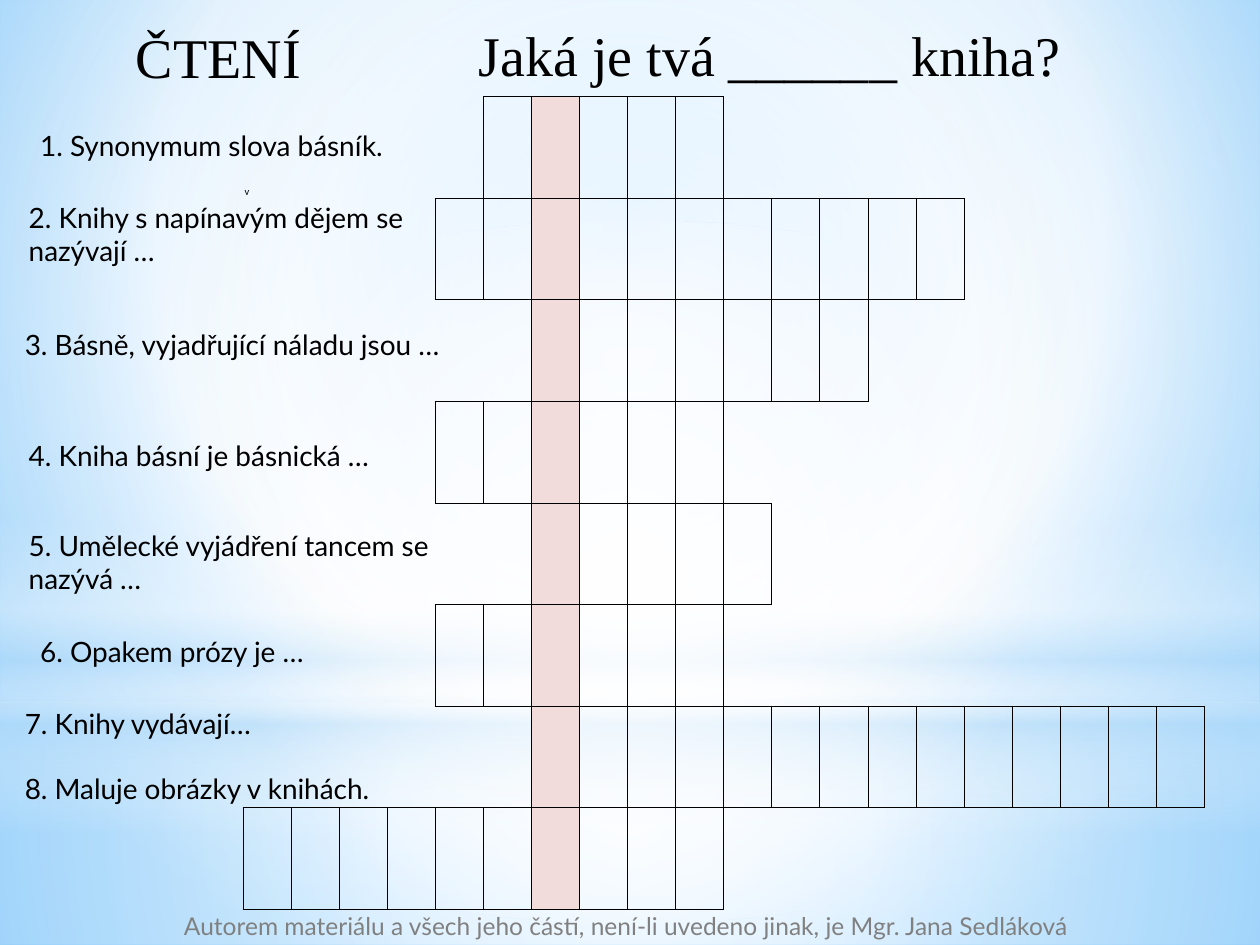
from lxml import etree
from pptx import Presentation
from pptx.dml.color import RGBColor
from pptx.enum.shapes import MSO_SHAPE
from pptx.enum.text import MSO_ANCHOR, MSO_AUTO_SIZE, PP_ALIGN
from pptx.oxml import parse_xml
from pptx.oxml.ns import nsdecls, qn
from pptx.util import Cm, Pt

WIDTH, HEIGHT = 25.4, 19.05
COLUMNS, KEY_COLUMN = 20, 6
# First column and number of letters of each answer
ANSWERS = [(5, 5), (4, 11), (6, 7), (4, 6), (6, 5), (4, 6), (6, 14), (0, 10)]
# Left, top, width, height and text of each clue
CLUES = [
    (0.56, 2.46, 8.5, 0.94, "1. Synonymum slova básník."),
    (0.33, 3.91, 8.43, 1.63, "2. Knihy s napínavým dějem se nazývají …"),
    (0.25, 6.48, 10.36, 0.94, "3. Básně, vyjadřující náladu jsou …"),
    (0.33, 8.71, 8.43, 0.94, "4. Kniha básní je básnická …"),
    (0.33, 10.52, 10.31, 1.63, "5. Umělecké vyjádření tancem se nazývá …"),
    (0.56, 12.67, 8.2, 0.94, "6. Opakem prózy je …"),
    (0.25, 14.12, 8.13, 0.94, "7. Knihy vydávají…"),
    (0.25, 15.42, 9.78, 0.94, "8. Maluje obrázky v knihách."),
]


def color(value):
    return RGBColor.from_string(value)


def set_gradient(fill, parent, stops, center=None):
    """Stops are (position, colour, opacity) in percent; without a center it runs downwards."""
    fill.solid()
    marks = "".join(
        f'<a:gs pos="{position * 1000}"><a:srgbClr val="{value}">'
        f'<a:alpha val="{opacity * 1000}"/></a:srgbClr></a:gs>'
        for position, value, opacity in stops)
    if center:
        sides = " ".join(f'{side}="{inset * 1000}"' for side, inset in zip("ltrb", center))
        course = f'<a:path path="circle"><a:fillToRect {sides}/></a:path>'
    else:
        course = '<a:lin ang="5400000" scaled="0"/>'
    gradient = parse_xml(f'<a:gradFill {nsdecls("a")} rotWithShape="1">'
                         f'<a:gsLst>{marks}</a:gsLst>{course}</a:gradFill>')
    parent.replace(parent.find(qn("a:solidFill")), gradient)


def write(frame, text, size=16, font="Lato", ink="000000", anchor=MSO_ANCHOR.TOP,
          insets=(0.25, 0.13, 0.25, 0.13)):
    frame.word_wrap = True
    frame.vertical_anchor = anchor
    (frame.margin_left, frame.margin_top,
     frame.margin_right, frame.margin_bottom) = map(Cm, insets)
    para = frame.paragraphs[0]
    para.alignment = PP_ALIGN.LEFT
    span = para.add_run()
    span.text = text
    span.font.size, span.font.name = Pt(size), font
    span.font.color.rgb = color(ink)


def add_text(page, box, text, **style):
    frame = page.shapes.add_textbox(*map(Cm, box)).text_frame
    write(frame, text, **style)


def add_backdrop(page):
    background = page.background.fill
    background.solid()
    set_gradient(background, page.element.find(".//" + qn("p:bgPr")),
                 [(0, "9ED5FF", 100), (60, "FFFFFF", 100), (100, "5BB9FF", 100)],
                 (20, 10, 20, 60))
    middle = (50, 50, 50, 50)
    horizon = 14.17
    layers = [
        (MSO_SHAPE.RECTANGLE, horizon, HEIGHT - horizon, middle,
         [(0, "FFFFFF", 91), (37, "FFFFFF", 76), (100, "B4DCFA", 79)]),
        (MSO_SHAPE.RECTANGLE, 0, horizon, middle,
         [(0, "FFFFFF", 89), (48, "FFFFFF", 62), (100, "B4DCFA", 79)]),
        (MSO_SHAPE.RECTANGLE, 10.46, 6.35, None,
         [(0, "FFFFFF", 0), (29, "FFFFFF", 30), (45, "B4DCFA", 40),
          (55, "FFFFFF", 26), (65, "B4DCFA", 60), (100, "FFFFFF", 0)]),
        (MSO_SHAPE.OVAL, 4.45, horizon, middle,
         [(0, "FFFFFF", 100), (56, "FFFFFF", 0)]),
    ]
    for kind, top, height, center, stops in layers:
        layer = page.shapes.add_shape(kind, 0, Cm(top), Cm(WIDTH), Cm(height))
        layer.shadow.inherit = False
        layer.line.fill.background()
        set_gradient(layer.fill, layer.element.spPr, stops, center)


def is_letter(row, column):
    if not 0 <= row < len(ANSWERS):
        return False
    start, length = ANSWERS[row]
    return start <= column < start + length


def set_borders(cell, row, column):
    """Rule each edge that touches a letter square, and clear the others."""
    neighbours = {"L": (row, column - 1), "R": (row, column + 1),
                  "T": (row - 1, column), "B": (row + 1, column)}
    properties = cell._tc.get_or_add_tcPr()
    for index, (side, other) in enumerate(neighbours.items()):
        line = etree.Element(qn(f"a:ln{side}"), w=str(Pt(0.5)))
        if is_letter(row, column) or is_letter(*other):
            paint = etree.SubElement(line, qn("a:solidFill"))
            etree.SubElement(paint, qn("a:srgbClr"), val="000000")
        else:
            etree.SubElement(line, qn("a:noFill"))
        properties.insert(index, line)


def add_crossword(page, box):
    left, top, width, height = map(Cm, box)
    table = page.shapes.add_table(len(ANSWERS), COLUMNS, left, top, width, height).table
    table.first_row = table.horz_banding = False
    for column in table.columns:
        column.width = width // COLUMNS
    for line in table.rows:
        line.height = height // len(ANSWERS)
    for row in range(len(ANSWERS)):
        for column in range(COLUMNS):
            cell = table.cell(row, column)
            if column == KEY_COLUMN:
                cell.fill.solid()
                cell.fill.fore_color.rgb = color("F2DCDB")
            else:
                cell.fill.background()
            set_borders(cell, row, column)
    corner = table.cell(0, 0)
    corner.vertical_anchor = MSO_ANCHOR.BOTTOM
    corner.margin_left = corner.margin_right = corner.margin_top = Cm(0.03)
    corner.margin_bottom = 0
    span = corner.text_frame.paragraphs[0].add_run()
    span.text = "v"
    span.font.size, span.font.name = Pt(6), "Calibri"
    span.font.color.rgb = color("000000")


def add_clues(page):
    for *box, text in CLUES:
        add_text(page, box, text)


def add_heading(page, subject_box, title_box):
    style = {"size": 32, "font": "Times New Roman"}
    add_text(page, subject_box, "ČTENÍ", **style)
    title = page.shapes.title
    title.left, title.top, title.width, title.height = map(Cm, title_box)
    write(title.text_frame, "Jaká je tvá ______ kniha?", **style)
    title.text_frame.auto_size = MSO_AUTO_SIZE.NONE
    title.element.getparent().append(title.element)  # bring to front


def main():
    deck = Presentation()
    deck.slide_width, deck.slide_height = Cm(WIDTH), Cm(HEIGHT)
    page = deck.slides.add_slide(deck.slide_layouts.get_by_name("Title Only"))
    add_backdrop(page)
    add_crossword(page, (4.9, 1.95, 19.4, 16.38))
    add_clues(page)
    add_heading(page, (2.49, 0.33, 5.59, 1.63), (9.4, 0.28, 14.05, 2.39))
    add_text(page, (3.71, 17.98, 21.36, 1.35),
             "Autorem materiálu a všech jeho částí, není-li uvedeno jinak, je Mgr. Jana Sedláková",
             size=14, ink="808080", anchor=MSO_ANCHOR.MIDDLE, insets=(0, 0.13, 0.25, 0.13))
    deck.save("out.pptx")


if __name__ == "__main__":
    main()
